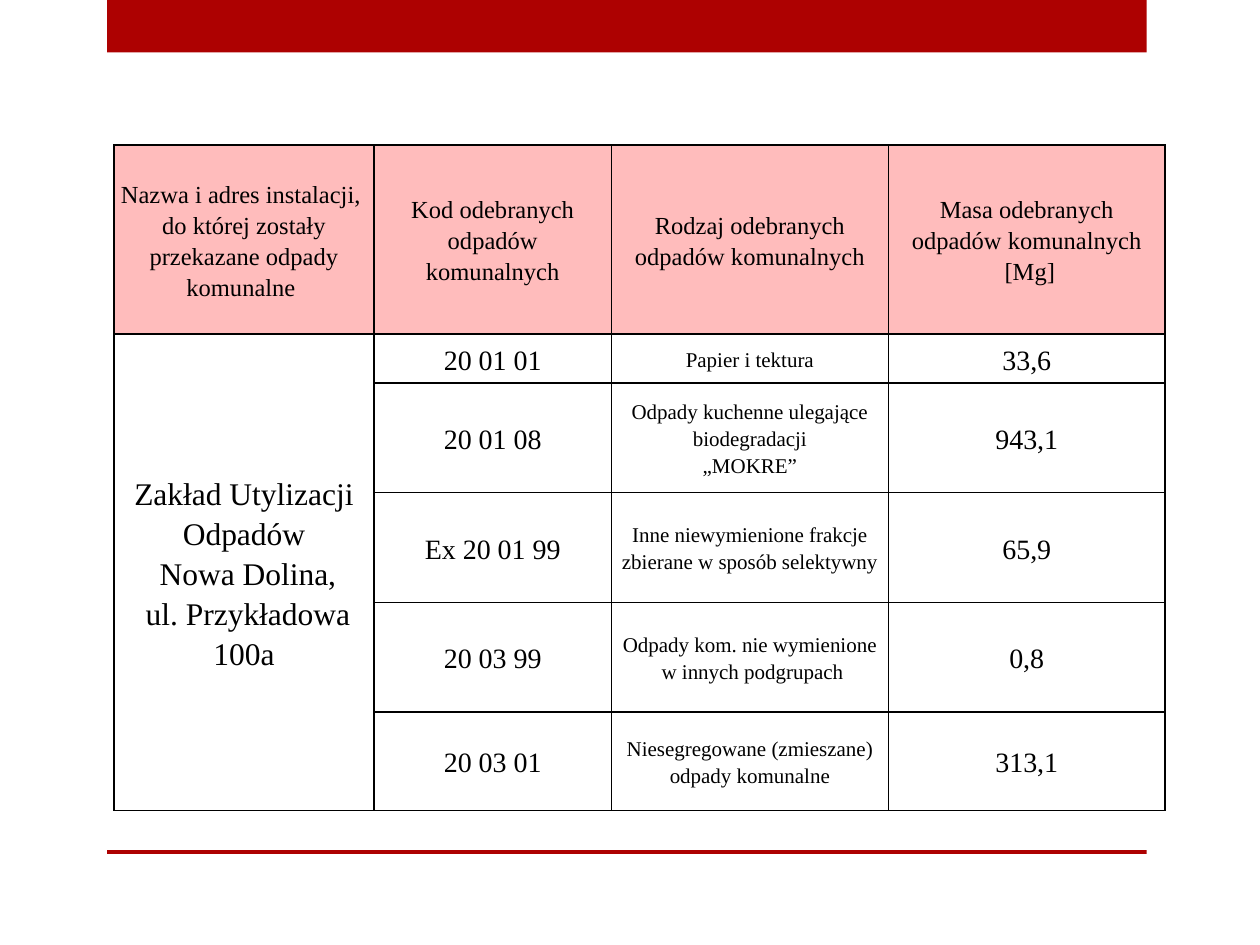
import copy

import pptx
import pptx.dml.color
import pptx.enum.shapes
import pptx.enum.text
import pptx.oxml
import pptx.oxml.ns
import pptx.util

Pt = pptx.util.Pt
qn = pptx.oxml.ns.qn

# Content: \n starts a paragraph, \v breaks a line
HEADERS = [
    "Nazwa i adres instalacji, \vdo której zostały przekazane odpady komunalne ",
    "Kod odebranych odpadów komunalnych",
    "Rodzaj odebranych odpadów komunalnych",
    "Masa odebranych odpadów komunalnych\n [Mg]",
]
FACILITY = "Zakład Utylizacji Odpadów\v Nowa Dolina,\n ul. Przykładowa 100a"
WASTE = [
    ("20 01 01", "Papier i tektura", "33,6"),
    ("20 01 08", "Odpady kuchenne ulegające biodegradacji\v„MOKRE”", "943,1"),
    ("Ex 20 01 99", "Inne niewymienione frakcje zbierane w sposób selektywny", "65,9"),
    ("20 03 99", "Odpady kom. nie wymienione\v w innych podgrupach", "0,8"),
    ("20 03 01", "Niesegregowane (zmieszane) odpady komunalne", "313,1"),
]

# Style and layout, in points
COLORS = {"accent": "AD0101", "header": "FFBCBC", "text": "000000", "border": "000000"}
FONT = "Times New Roman"
HEADER_SIZE = 14
BODY_SIZES = [18, 16, 12, 16]
COLUMN_WIDTHS = [148.5, 135.8, 158.2, 158.2]
ROW_HEIGHTS = [108, 28.2, 62.6, 62.6, 62.6, 56.3]
TABLE_LEFT, TABLE_TOP = 65.2, 82.8
BAR_LEFT, BAR_WIDTH = 61.2, 594
BARS = [(0, 30), (485.8, 2.2)]  # top, height


def rgb(name):
    return pptx.dml.color.RGBColor.from_string(COLORS[name])


def add_borders(cell):
    properties = cell._tc.get_or_add_tcPr()
    for position, side in enumerate(("lnL", "lnR", "lnT", "lnB")):
        line = pptx.oxml.parse_xml(
            f'<a:{side} xmlns:a="http://schemas.openxmlformats.org/drawingml/2006/main" '
            f'w="{Pt(1)}"><a:solidFill><a:srgbClr val="{COLORS["border"]}"/>'
            f"</a:solidFill></a:{side}>"
        )
        properties.insert(position, line)


def write_cell(cell, text, size):
    cell.text_frame.text = text
    cell.vertical_anchor = pptx.enum.text.MSO_ANCHOR.MIDDLE
    cell.margin_left = cell.margin_right = Pt(3.6)
    cell.margin_top = cell.margin_bottom = 0
    for paragraph in cell.text_frame.paragraphs:
        paragraph.alignment = pptx.enum.text.PP_ALIGN.CENTER
        paragraph.line_spacing = 1.15
        for run in paragraph.runs:
            run.font.name = FONT
            run.font.size = Pt(size)
            run.font.color.rgb = rgb("text")
        # Line breaks take the same size as the text around them
        for line_break in paragraph._p.findall(qn("a:br")):
            line_break.append(copy.deepcopy(paragraph.runs[0]._r.rPr))


presentation = pptx.Presentation()
presentation.slide_width, presentation.slide_height = Pt(720), Pt(540)
slide = presentation.slides.add_slide(presentation.slide_layouts[6])

# Top band and bottom rule
for top, height in BARS:
    bar = slide.shapes.add_shape(
        pptx.enum.shapes.MSO_SHAPE.RECTANGLE,
        Pt(BAR_LEFT), Pt(top), Pt(BAR_WIDTH), Pt(height),
    )
    bar.shadow.inherit = False
    bar.fill.solid()
    bar.fill.fore_color.rgb = rgb("accent")
    bar.line.fill.background()

# Table grid
table = slide.shapes.add_table(
    len(ROW_HEIGHTS), len(COLUMN_WIDTHS), Pt(TABLE_LEFT), Pt(TABLE_TOP),
    Pt(sum(COLUMN_WIDTHS)), Pt(sum(ROW_HEIGHTS)),
).table
table.horz_banding = False
for column, width in zip(table.columns, COLUMN_WIDTHS):
    column.width = Pt(width)
for row, height in zip(table.rows, ROW_HEIGHTS):
    row.height = Pt(height)
table.cell(1, 0).merge(table.cell(len(WASTE), 0))

# Cell fills, borders and text
rows = [HEADERS] + [(FACILITY if index == 0 else "", *waste) for index, waste in enumerate(WASTE)]
for row_index, texts in enumerate(rows):
    is_header = row_index == 0
    for column_index, text in enumerate(texts):
        cell = table.cell(row_index, column_index)
        if is_header:
            cell.fill.solid()
            cell.fill.fore_color.rgb = rgb("header")
        else:
            cell.fill.background()
        add_borders(cell)
        if not cell.is_spanned:
            write_cell(cell, text, HEADER_SIZE if is_header else BODY_SIZES[column_index])

presentation.save("out.pptx")
